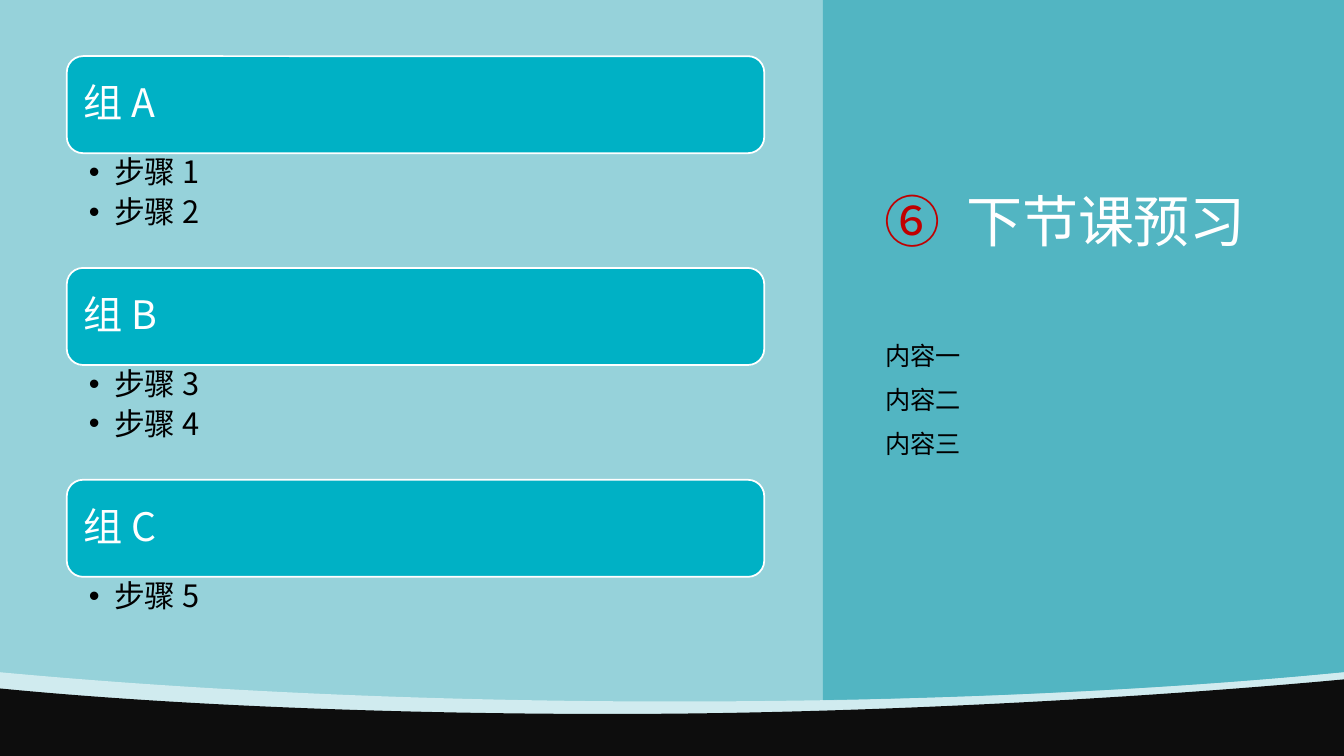
import pptx
import pptx.dml.color
import pptx.enum.shapes
import pptx.enum.text
import pptx.oxml
import pptx.oxml.ns
import pptx.util

Pt = pptx.util.Pt
ANCHOR = pptx.enum.text.MSO_ANCHOR
FONT = "Noto Sans CJK SC"
LINE_SPACING = 0.9
COLORS = {
    "background": "96D2DA", "panel": "52B5C2", "rim": "EAF6F8", "ground": "0D0D0D",
    "bar": "00B1C5", "number": "C00000", "white": "FFFFFF", "black": "000000",
}
GROUPS = [
    ("组 A", ["步骤 1", "步骤 2"]),
    ("组 B", ["步骤 3", "步骤 4"]),
    ("组 C", ["步骤 5"]),
]
TOPICS = ["内容一", "内容二", "内容三"]


def paint(fill, name):
    fill.solid()
    fill.fore_color.rgb = pptx.dml.color.RGBColor.from_string(COLORS[name])


def add_element(parent, tag, **attributes):
    element = pptx.oxml.parse_xml(f"<a:{tag} {pptx.oxml.ns.nsdecls('a')}/>")
    for name, value in attributes.items():
        element.set(name, value)
    parent.append(element)
    return element


def set_frame(frame, anchor, across, down):
    frame.word_wrap = True
    frame.auto_size = pptx.enum.text.MSO_AUTO_SIZE.NONE
    frame.vertical_anchor = anchor
    frame.margin_left = frame.margin_right = Pt(across)
    frame.margin_top = frame.margin_bottom = Pt(down)


def write(para, text, size, color):
    para.alignment = pptx.enum.text.PP_ALIGN.LEFT
    para.line_spacing = LINE_SPACING
    span = para.add_run()
    span.text = text
    span.font.size = Pt(size)
    span.font.name = FONT
    paint(span.font.fill, color)
    add_element(span.font._element, "ea", typeface=FONT)


def hang(para, indent):
    properties = para._p.get_or_add_pPr()
    properties.set("marL", str(Pt(indent)))
    properties.set("indent", str(-Pt(indent)))
    return properties


def add_lines(page, box, lines, margins, size, gap, bulleted=False):
    frame = page.shapes.add_textbox(*map(Pt, box)).text_frame
    set_frame(frame, ANCHOR.TOP, *margins)
    for index, text in enumerate(lines):
        para = frame.add_paragraph() if index else frame.paragraphs[0]
        if bulleted:
            properties = hang(para, 18)
            add_element(properties, "buFont", typeface="Arial")
            add_element(properties, "buChar", char="•")
        write(para, text, size, "black")
        if index:
            para.space_before = Pt(gap)


def add_outline(page, start, segments, color):
    """Each segment holds one point for a line or three for a cubic curve."""
    corners = [(Pt(x), Pt(y)) for segment in segments for x, y in segment]
    builder = page.shapes.build_freeform(*map(Pt, start), scale=1.0)
    builder.add_line_segments(corners, close=True)
    shape = builder.convert_to_shape()
    strokes = iter(shape._element.findall(".//" + pptx.oxml.ns.qn("a:lnTo")))
    for segment in segments:
        first, *others = [next(strokes) for _ in segment]
        if others:
            bend = add_element(first.getparent(), "cubicBezTo")
            first.addprevious(bend)
            for stroke in (first, *others):
                bend.append(stroke[0])
                stroke.getparent().remove(stroke)
    shape.shadow.inherit = False
    paint(shape.fill, color)
    shape.line.fill.background()
    return shape


def add_backdrop(page, width, height):
    paint(page.background.fill, "background")
    # Right panel
    edge = 587.8
    add_outline(page, (edge, 0), [
        [(width, 0)], [(width, 480.2)],
        [(849.6, 491), (722.9, 497.5), (edge, 500.4)],
    ], "panel")
    # Translucent rim
    rim = add_outline(page, (0, 480.2), [
        [(139.7, 493.2), (304.6, 501.1), (481, 501.1)],
        [(656.6, 501.1), (820.8, 493.9), (width, 480.2)],
        [(width, height)], [(0, height)],
    ], "rim")
    color = rim.fill._xPr.find(".//" + pptx.oxml.ns.qn("a:srgbClr"))
    add_element(color, "alpha", val="70000")
    # Dark ground
    add_outline(page, (width, 485.3), [
        [(width, height)], [(0, height)], [(0, 491.8)],
        [(139.7, 505.4), (320.4, 511.2), (481, 509.8)],
        [(640.1, 508.3), (820.8, 498.2), (width, 485.3)],
    ], "ground")


def add_sidebar(page, left, top, width):
    # Numbered title, brought in front of the backdrop
    title = page.shapes.title
    title._element.getparent().append(title._element)
    title.left, title.top, title.width, title.height = map(Pt, (left, top, width, 63.4))
    set_frame(title.text_frame, ANCHOR.BOTTOM, 7.2, 3.6)
    para = title.text_frame.paragraphs[0]
    properties = hang(para, 58.5)
    add_element(add_element(properties, "buClr"), "srgbClr", val=COLORS["number"])
    add_element(properties, "buFont", typeface="+mj-lt")
    add_element(properties, "buAutoNum", type="circleNumDbPlain", startAt="6")
    write(para, "下节课预习", 40, "white")
    # Topics
    add_lines(page, (left + 0.7, top + 119.5, width, 144), TOPICS, (7.2, 3.6), 18, 12)


def add_groups(page, left, top, width, pitch):
    bar_height = 69.3
    for index, (label, steps) in enumerate(GROUPS):
        y = top + index * pitch
        bar = page.shapes.add_shape(
            pptx.enum.shapes.MSO_SHAPE.ROUNDED_RECTANGLE,
            Pt(left), Pt(y), Pt(width), Pt(bar_height))
        bar.shadow.inherit = False
        paint(bar.fill, "bar")
        paint(bar.line.fill, "white")
        bar.line.width = Pt(1.25)
        set_frame(bar.text_frame, ANCHOR.MIDDLE, 8.6, 8.6)
        write(bar.text_frame.paragraphs[0], label, 28, "white")
        steps_box = (left, y + bar_height, width, 41 * len(steps))
        add_lines(page, steps_box, steps, (15.8, 2.9), 22, 4.4, bulleted=True)


def main():
    deck = pptx.Presentation()
    deck.slide_width, deck.slide_height = Pt(960), Pt(540)
    page = deck.slides.add_slide(deck.slide_layouts.get_by_name("Title Only"))
    add_backdrop(page, 960, 540)
    add_sidebar(page, 624.4, 122.4, 298)
    add_groups(page, 47.7, 40.1, 498.2, 151.3)
    deck.save("out.pptx")


if __name__ == "__main__":
    main()
